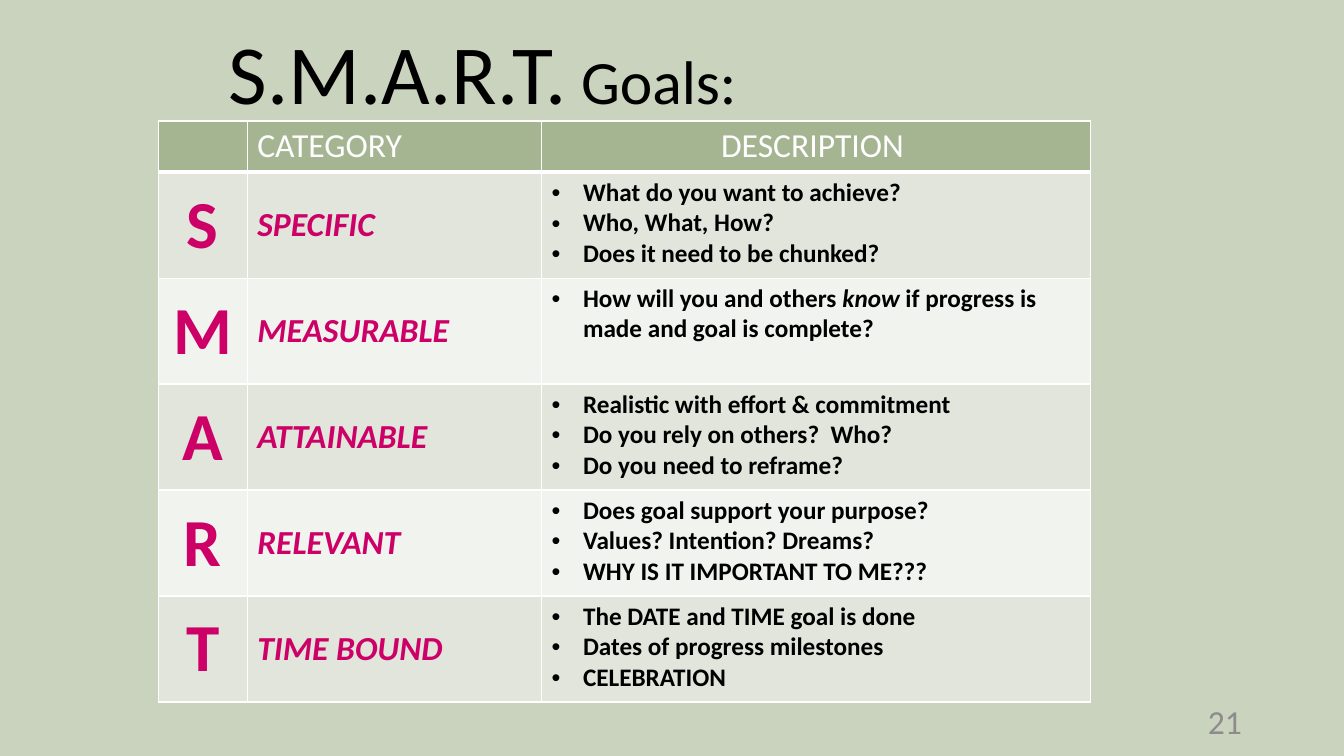
from lxml.etree import SubElement
from pptx import Presentation
from pptx.dml.color import RGBColor as RGB
from pptx.enum.text import MSO_ANCHOR as ANCHOR, MSO_AUTO_SIZE as AUTO, PP_ALIGN as ALIGN
from pptx.oxml.ns import qn
from pptx.util import Cm, Pt

COLORS = {"back": "C9D3BE", "header": "A5B592", "odd": "E1E5DC", "even": "F0F3EE",
          "white": "FFFFFF", "black": "000000", "pink": "CC0066", "gray": "8C8C8C"}
FORMATS = {
    "title": {"size": Pt(60), "color": "black"},
    "subtitle": {"size": Pt(44), "color": "black"},
    "header": {"size": Pt(24), "color": "white", "bold": False},
    "letter": {"size": Pt(48), "color": "pink", "bold": True},
    "category": {"size": Pt(24), "color": "pink", "bold": True, "italic": True},
    "point": {"size": Pt(18), "color": "black", "bold": True, "italic": False},
    "stress": {"size": Pt(18), "color": "black", "bold": True, "italic": True},
    "number": {"size": Pt(24), "color": "gray"},
}
GOALS = {
    "SPECIFIC": ["What do you want to achieve?", "Who, What, How?",
                 "Does it need to be chunked?"],
    "MEASURABLE": ["How will you and others *know* if progress is made and goal is complete?"],
    "ATTAINABLE": ["Realistic with effort & commitment", "Do you rely on others?  Who?",
                   "Do you need to reframe?"],
    "RELEVANT": ["Does goal support your purpose?", "Values? Intention? Dreams?",
                 "WHY IS IT IMPORTANT TO ME???"],
    "TIME BOUND": ["The DATE and TIME goal is done", "Dates of progress milestones",
                   "CELEBRATION"],
}


class GoalSlide:
    """Holds the style and the current slide."""

    def __init__(self, prs, font="Calibri"):
        """Add a title-only slide with a plain background."""
        self.font = font
        self.s = prs.slides.add_slide(prs.slide_layouts[5])
        self.paint(self.s.background.fill, "back")

    def paint(self, fill, color):
        """Make a fill solid."""
        fill.solid()
        fill.fore_color.rgb = RGB.from_string(COLORS[color])

    def run(self, p, text, style):
        """Append a formatted run to a paragraph."""
        r = p.add_run()
        r.text = text
        r.font.name = self.font
        for name, value in FORMATS[style].items():
            if name == "color":
                r.font.color.rgb = RGB.from_string(COLORS[value])
            else:
                setattr(r.font, name, value)

    def title(self, runs, box):
        """Place and fill the title placeholder."""
        sp = self.s.shapes.title
        for name, value in zip(("left", "top", "width", "height"), box):
            setattr(sp, name, Cm(value))
        tf = sp.text_frame
        tf.auto_size, tf.vertical_anchor, tf.word_wrap = AUTO.NONE, ANCHOR.MIDDLE, True
        p = tf.paragraphs[0]
        p.alignment, p.line_spacing = ALIGN.LEFT, 0.9
        for text, style in runs:
            self.run(p, text, style)

    def text(self, text, style, box, align):
        """Add a text box with one line."""
        tf = self.s.shapes.add_textbox(*map(Cm, box)).text_frame
        tf.word_wrap, tf.vertical_anchor = True, ANCHOR.MIDDLE
        p = tf.paragraphs[0]
        p.alignment = align
        self.run(p, text, style)

    def borders(self, cell, bottom):
        """Draw white cell borders, with a given bottom width."""
        tcPr = cell._tc.get_or_add_tcPr()
        for side, width in {"L": 1, "R": 1, "T": 1, "B": bottom}.items():
            ln = SubElement(tcPr, qn(f"a:ln{side}"), w=str(Pt(width)))
            SubElement(SubElement(ln, qn("a:solidFill")), qn("a:srgbClr"), val=COLORS["white"])

    def cell(self, cell, text, style, fill, align=ALIGN.LEFT, anchor=ANCHOR.MIDDLE, bottom=1):
        """Fill a cell with one line of text."""
        self.borders(cell, bottom)
        self.paint(cell.fill, fill)
        cell.vertical_anchor = anchor
        p = cell.text_frame.paragraphs[0]
        p.alignment = align
        if text:
            self.run(p, text, style)

    def bullets(self, cell, points, indent=0.79):
        """Write bulleted points in a cell, with stressed words between asterisks."""
        tf = cell.text_frame
        for i, point in enumerate(points):
            p = tf.add_paragraph() if i else tf.paragraphs[0]
            pPr = p._p.get_or_add_pPr()
            pPr.set("marL", str(Cm(indent)))
            pPr.set("indent", str(-Cm(indent)))
            SubElement(pPr, qn("a:buFont"), typeface="Arial")
            SubElement(pPr, qn("a:buChar"), char="•")
            for j, part in enumerate(point.split("*")):
                self.run(p, part, "stress" if j % 2 else "point")

    def table(self, headers, goals, box, widths, heights):
        """Add the goal table."""
        table = self.s.shapes.add_table(len(goals) + 1, len(widths), *map(Cm, box)).table
        for column, width in zip(table.columns, widths):
            column.width = Cm(width)
        for i, row in enumerate(table.rows):
            row.height = Cm(heights[min(i, 1)])
        for j, (text, align) in enumerate(headers):
            self.cell(table.cell(0, j), text, "header", "header", align, ANCHOR.TOP, 3)
        for i, (category, points) in enumerate(goals.items(), 1):
            fill = "odd" if i % 2 else "even"
            letter, name, description = (table.cell(i, j) for j in range(3))
            self.cell(letter, category[0], "letter", fill, ALIGN.CENTER)
            self.cell(name, category, "category", fill)
            self.cell(description, "", "point", fill, anchor=ANCHOR.TOP)
            self.bullets(description, points)


def main():
    """Build and save the slide."""
    prs = Presentation()
    prs.slide_width, prs.slide_height = Cm(33.87), Cm(19.05)
    slide = GoalSlide(prs)
    slide.title([("S.M.A.R.T.", "title"), (" Goals:", "subtitle")], (5.51, 0.2, 22.86, 3.48))
    headers = [("", ALIGN.LEFT), ("CATEGORY", ALIGN.LEFT), ("DESCRIPTION ", ALIGN.CENTER)]
    slide.table(headers, GOALS, (3.99, 3.05, 23.5, 14.62), (2.24, 7.42, 13.84), (1.27, 2.67))
    slide.text("21", "number", (23.93, 17.65, 7.62, 1.02), ALIGN.RIGHT)
    prs.save("out.pptx")


if __name__ == "__main__":
    main()
